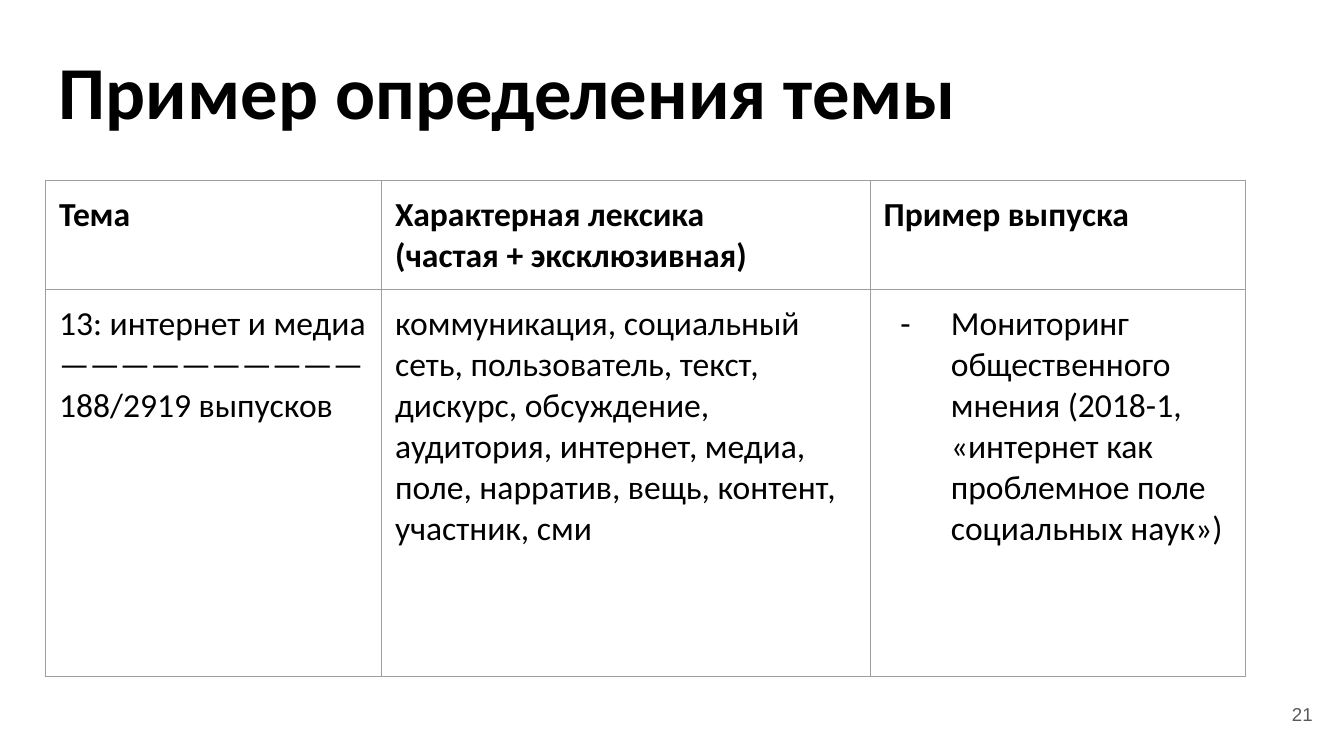
"""Build a slide with a table that shows how a topic is defined."""
from lxml import etree
from pptx import Presentation
from pptx.dml.color import RGBColor
from pptx.enum.text import MSO_ANCHOR, PP_ALIGN
from pptx.oxml.ns import qn
from pptx.util import Pt

SCALE = 4572
BLACK, GREY, BORDER = "000000", "595959", "9E9E9E"
TOP, MIDDLE = MSO_ANCHOR.TOP, MSO_ANCHOR.MIDDLE
LEFT, RIGHT = PP_ALIGN.LEFT, PP_ALIGN.RIGHT
INSET = 20
COLUMNS = (500, 727, 558)
ROWS = (156, 576)
HEADERS = (
    ["Тема"],
    ["Характерная лексика\n(частая + эксклюзивная)"],
    ["Пример выпуска"],
)
TOPIC = (
    ["13: интернет и медиа", "——————————", "188/2919 выпусков"],
    ["коммуникация, социальный сеть, пользователь, текст, дискурс, "
     "обсуждение, аудитория, интернет, медиа, поле, нарратив, вещь, "
     "контент, участник, сми"],
    ["Мониторинг общественного мнения (2018-1, «интернет как "
     "проблемное поле социальных наук»)"],
)


def px(n):
    return n * SCALE


def rgb(value):
    return RGBColor.from_string(value)


def set_insets(box):
    box.margin_left = box.margin_right = px(INSET)
    box.margin_top = box.margin_bottom = px(INSET)


def add_run(p, text, size, bold=False, font="Calibri", color=BLACK):
    r = p.add_run()
    r.text = text
    r.font.size = Pt(size)
    r.font.bold = bold
    r.font.name = font
    r.font.color.rgb = rgb(color)


def add_text(s, x, y, w, h, text, size, anchor=TOP, align=LEFT, **style):
    tf = s.shapes.add_textbox(px(x), px(y), px(w), px(h)).text_frame
    tf.word_wrap = True
    tf.vertical_anchor = anchor
    set_insets(tf)
    p = tf.paragraphs[0]
    p.alignment = align
    add_run(p, text, size, **style)


def set_bullet(p, char):
    pPr = p._p.get_or_add_pPr()
    pPr.set("marL", str(px(100)))
    pPr.set("indent", str(px(-75)))
    color = etree.SubElement(pPr, qn("a:buClr"))
    etree.SubElement(color, qn("a:srgbClr"), val=BLACK)
    etree.SubElement(pPr, qn("a:buFont"), typeface="Calibri")
    etree.SubElement(pPr, qn("a:buChar"), char=char)


def set_borders(cell):
    tcPr = cell._tc.get_or_add_tcPr()
    for side in ("a:lnL", "a:lnR", "a:lnT", "a:lnB"):
        line = etree.SubElement(tcPr, qn(side), w=str(Pt(0.75)))
        fill = etree.SubElement(line, qn("a:solidFill"))
        etree.SubElement(fill, qn("a:srgbClr"), val=BORDER)


def fill_cell(cell, paragraphs, bold):
    set_borders(cell)
    cell.fill.background()
    cell.vertical_anchor = TOP
    set_insets(cell)
    tf = cell.text_frame
    for i, text in enumerate(paragraphs):
        p = tf.add_paragraph() if i else tf.paragraphs[0]
        for j, line in enumerate(text.split("\n")):
            if j:
                p.add_line_break()
            add_run(p, line, 18, bold)


def add_topic_table(s, x, y):
    frame = s.shapes.add_table(len(ROWS), len(COLUMNS), px(x), px(y),
                               px(sum(COLUMNS)), px(sum(ROWS)))
    table = frame.table
    table.first_row = table.horz_banding = False
    for column, width in zip(table.columns, COLUMNS):
        column.width = px(width)
    for row, height in zip(table.rows, ROWS):
        row.height = px(height)
    for i, texts in enumerate((HEADERS, TOPIC)):
        for j, paragraphs in enumerate(texts):
            fill_cell(table.cell(i, j), paragraphs, bold=i == 0)
    set_bullet(table.cell(1, 2).text_frame.paragraphs[0], "-")


def main():
    prs = Presentation()
    prs.slide_width, prs.slide_height = px(2000), px(1125)
    s = prs.slides.add_slide(prs.slide_layouts[6])
    add_topic_table(s, 68, 269)
    add_text(s, 68, 47, 1864, 126, "Пример определения темы", 40, bold=True)
    add_text(s, 1853, 1020, 120, 86, "21", 10, MIDDLE, RIGHT,
             font="Arial", color=GREY)
    prs.save("out.pptx")


if __name__ == "__main__":
    main()
